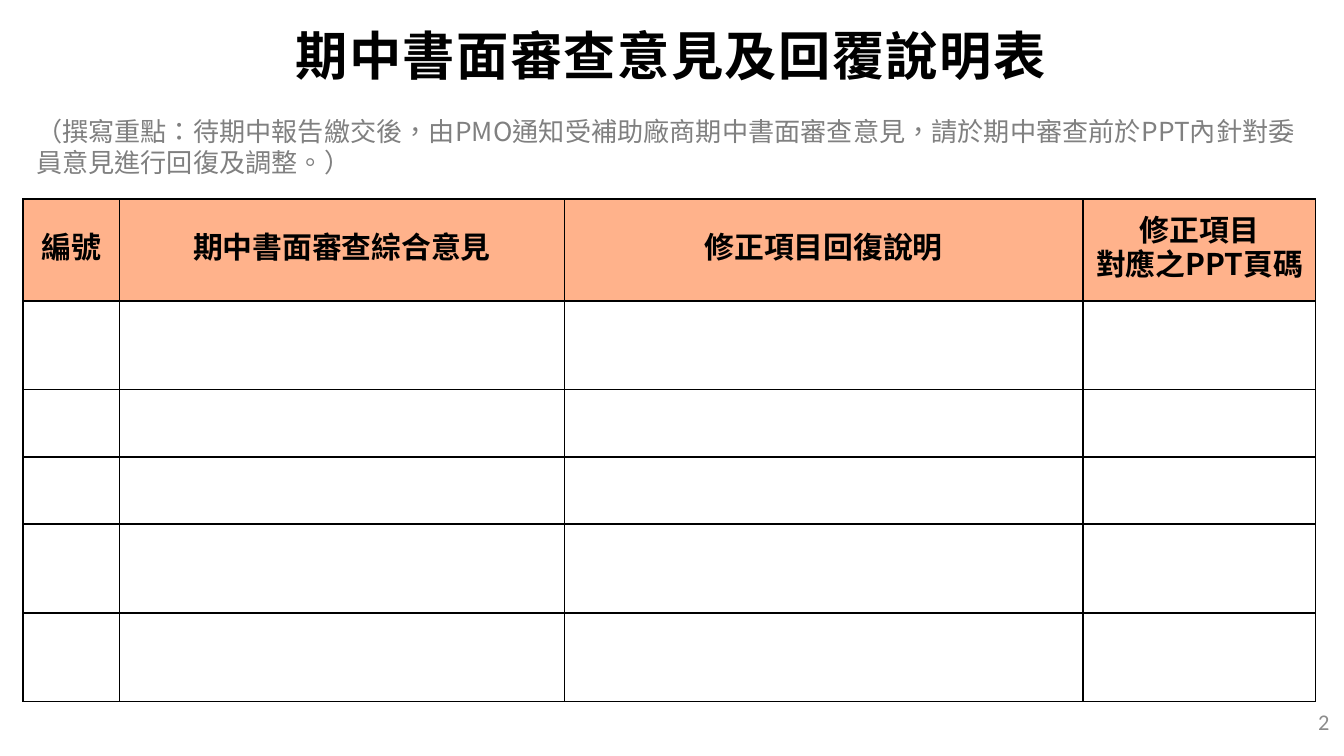
from itertools import product

from pptx import Presentation
from pptx.dml.color import RGBColor
from pptx.enum.text import MSO_ANCHOR, PP_ALIGN
from pptx.oxml import parse_xml
from pptx.oxml.ns import nsdecls, qn
from pptx.util import Inches, Pt

WIDE = 10
HIGH = WIDE * 9 / 16
HUES = {"ink": "000000", "note": "808080", "page": "8C8C8C", "head": "FFB28B"}
SANS = "Noto Sans CJK SC"
COLS = [0.72, 3.31, 3.86, 1.73]
ROWS = [0.76, 0.66, 0.5, 0.5, 0.66, 0.66]
HEADS = ["編號", "期中書面審查綜合意見", "修正項目回復說明", "修正項目\n對應之PPT頁碼"]
NOTE = (
    "（撰寫重點：待期中報告繳交後，由PMO通知受補助廠商期中書面審查意見，"
    "請於期中審查前於PPT內針對委員意見進行回復及調整。）"
)


def style(para, look, hue, align, gap=None):
    """Format every run of a paragraph, for Latin and Chinese letters alike."""
    para.alignment = align
    for run in para.runs:
        for key, value in look.items():
            setattr(run.font, key, value)
        run.font.color.rgb = RGBColor.from_string(HUES[hue])
        props = run.font._element
        props.set("lang", "zh-TW")
        if gap:
            props.set("spc", str(gap))
        props.append(parse_xml(f'<a:ea {nsdecls("a")} typeface="{look["name"]}"/>'))


def label(slide, box, text, look, hue, align, anchor, pads=(0.1, 0.05), gap=None):
    """Place one wrapped paragraph of text in a box."""
    frame = slide.shapes.add_textbox(*map(Inches, box)).text_frame
    side, edge = map(Inches, pads)
    form = {
        "word_wrap": True, "vertical_anchor": anchor, "text": text,
        "margin_left": side, "margin_right": side,
        "margin_top": edge, "margin_bottom": edge,
    }
    for key, value in form.items():
        setattr(frame, key, value)
    style(frame.paragraphs[0], look, hue, align, gap)


def border(cell):
    """Draw a thin line on all four sides of a cell."""
    props = cell._tc.get_or_add_tcPr()
    for spot, side in enumerate(("lnL", "lnR", "lnT", "lnB")):
        props.insert(spot, parse_xml(
            f'<a:{side} {nsdecls("a")} w="{Pt(1)}"><a:solidFill>'
            f'<a:srgbClr val="{HUES["ink"]}"/></a:solidFill></a:{side}>'
        ))


def header(cell, text):
    """Fill a heading cell and centre its text."""
    form = {
        "text": text, "vertical_anchor": MSO_ANCHOR.MIDDLE,
        "margin_left": Inches(0.01), "margin_right": Inches(0.01),
        "margin_top": 0, "margin_bottom": 0,
    }
    for key, value in form.items():
        setattr(cell, key, value)
    cell.fill.solid()
    cell.fill.fore_color.rgb = RGBColor.from_string(HUES["head"])
    for para in cell.text_frame.paragraphs:
        para.line_spacing = Pt(18)
        style(para, {"name": SANS, "size": Pt(16), "bold": True}, "ink", PP_ALIGN.CENTER)


def review(slide, left, top):
    """Build the review table with a heading row and empty rows to fill in."""
    box = map(Inches, (left, top, sum(COLS), sum(ROWS)))
    table = slide.shapes.add_table(len(ROWS), len(COLS), *box).table
    table.horz_banding = False
    table.first_row = False
    table._tbl.tblPr.find(qn("a:tableStyleId")).text = "{2D5ABB26-0587-4C30-8999-92F81FD0307C}"
    for col, width in zip(table.columns, COLS):
        col.width = Inches(width)
    for row, height in zip(table.rows, ROWS):
        row.height = Inches(height)
    for row, col in product(range(len(ROWS)), range(len(COLS))):
        cell = table.cell(row, col)
        if row == 0:
            header(cell, HEADS[col])
        else:
            cell.fill.background()
        border(cell)


def main():
    """Build and save the slide."""
    deck = Presentation()
    deck.slide_width, deck.slide_height = Inches(WIDE), Inches(HIGH)
    slide = deck.slides.add_slide(deck.slide_layouts[6])
    label(slide, (7.74, 5.22, 2.25, 0.3), "2", {"name": "Calibri", "size": Pt(12)},
          "page", PP_ALIGN.RIGHT, MSO_ANCHOR.MIDDLE)
    label(slide, (0.17, 0.81, sum(COLS), 0.57), NOTE, {"name": SANS, "size": Pt(14)},
          "note", PP_ALIGN.LEFT, MSO_ANCHOR.TOP)
    label(slide, (-0.01, -0.02, WIDE, 0.85), "期中書面審查意見及回覆說明表",
          {"name": SANS, "size": Pt(28), "bold": True},
          "ink", PP_ALIGN.CENTER, MSO_ANCHOR.MIDDLE, (0.07, 0.04), 80)
    review(slide, 0.17, 1.48)
    deck.save("out.pptx")


if __name__ == "__main__":
    main()
